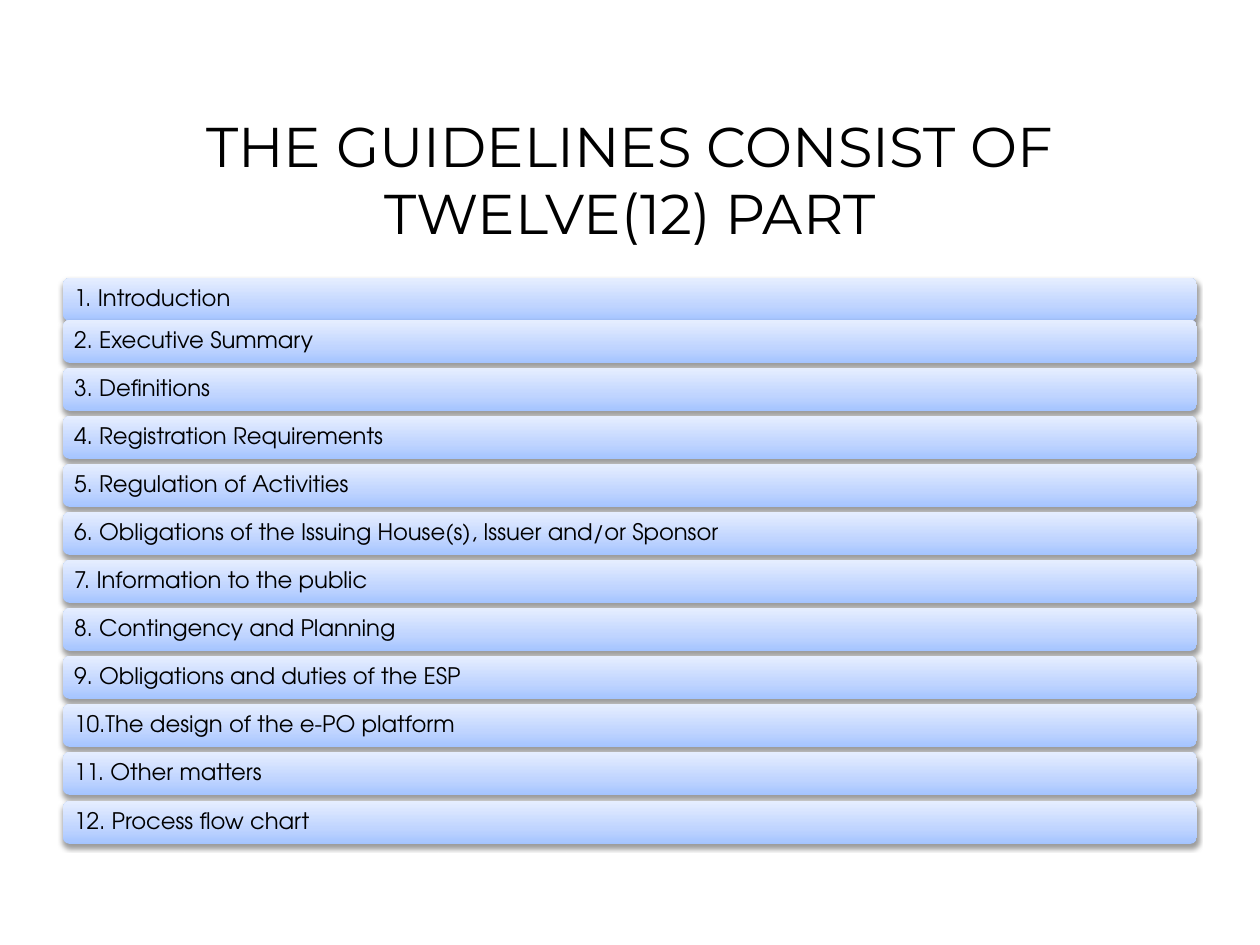
from lxml import etree
from pptx import Presentation
from pptx import util as u
from pptx.dml.color import RGBColor
from pptx.enum import shapes, text
from pptx.oxml import parse_xml
from pptx.oxml.ns import nsdecls, qn

PX = u.Inches(1) / 126
PARTS = [
    "1. Introduction",
    "2. Executive Summary",
    "3. Definitions",
    "4. Registration Requirements",
    "5. Regulation of Activities",
    "6. Obligations of the Issuing House(s), Issuer and/or Sponsor",
    "7. Information to the public",
    "8. Contingency and Planning",
    "9. Obligations and duties of the ESP",
    "10.The design of the e-PO platform",
    "11. Other matters",
    "12. Process flow chart",
]


def px(n):
    return u.Emu(round(n * PX))


def color(value):
    return RGBColor.from_string(value)


def write(tf, content, font, size, ink="000000", align=text.PP_ALIGN.LEFT,
          spacing=1.0, inset=(13, 6)):
    """Fill a frame with one paragraph; inset is (sides, top and bottom) in px."""
    tf.word_wrap = True
    tf.auto_size = text.MSO_AUTO_SIZE.NONE
    tf.vertical_anchor = text.MSO_ANCHOR.MIDDLE
    tf.margin_left = tf.margin_right = px(inset[0])
    tf.margin_top = tf.margin_bottom = px(inset[1])
    p = tf.paragraphs[0]
    p.alignment = align
    p.line_spacing = spacing
    r = p.add_run()
    r.text = content
    r.font.name = font
    r.font.size = u.Pt(size)
    r.font.color.rgb = color(ink)


class Deck:
    title_font = "Montserrat"
    body_font = "TeX Gyre Adventor"
    gradient = [(0, "A4C4FF"), (35, "BFD4FF"), (100, "E6EEFF")]

    def __init__(self):
        self.prs = Presentation()
        self.prs.slide_width = u.Inches(10)
        self.prs.slide_height = u.Inches(7.5)
        self.s = self.prs.slides.add_slide(self.prs.slide_layouts[5])

    def title(self, content, x, y, w, h):
        sp = self.s.shapes.title
        sp.left, sp.top, sp.width, sp.height = map(px, (x, y, w, h))
        write(sp.text_frame, content, self.title_font, 32,
              align=text.PP_ALIGN.CENTER)

    def bar(self, content, x, y, w, h):
        sp = self.s.shapes.add_shape(shapes.MSO_SHAPE.ROUNDED_RECTANGLE,
                                     *map(px, (x, y, w, h)))
        sp.line.fill.background()
        self.shade(sp)
        self.soft_shadow(sp)
        write(sp.text_frame, content, self.body_font, 13,
              spacing=0.9, inset=(9, 6))

    def shade(self, sp):
        """Three-stop gradient running from the bottom edge upwards."""
        stops = "".join(
            f'<a:gs pos="{pos * 1000}"><a:srgbClr val="{c}"/></a:gs>'
            for pos, c in self.gradient)
        fill = parse_xml(
            f'<a:gradFill {nsdecls("a")} rotWithShape="1"><a:gsLst>{stops}</a:gsLst>'
            '<a:lin ang="16200000" scaled="0"/></a:gradFill>')
        sp.element.spPr.find(qn("a:prstGeom")).addnext(fill)

    def soft_shadow(self, sp):
        sp.shadow.inherit = False
        effects = sp.element.spPr.find(qn("a:effectLst"))
        outer = etree.SubElement(effects, qn("a:outerShdw"), blurRad="40000",
                                 dist="20000", dir="5400000", rotWithShape="0")
        black = etree.SubElement(outer, qn("a:srgbClr"), val="000000")
        etree.SubElement(black, qn("a:alpha"), val="38000")


def main():
    deck = Deck()
    deck.title("THE GUIDELINES CONSIST OF TWELVE(12) PART", 63, 115, 1134, 127)
    # The first bar touches the second; the others are evenly spaced.
    tops = [278] + [320 + 481 * i // 10 for i in range(len(PARTS) - 1)]
    for part, top in zip(PARTS, tops):
        deck.bar(part, 63, top, 1134, 43)
    deck.prs.save("out.pptx")


if __name__ == "__main__":
    main()
